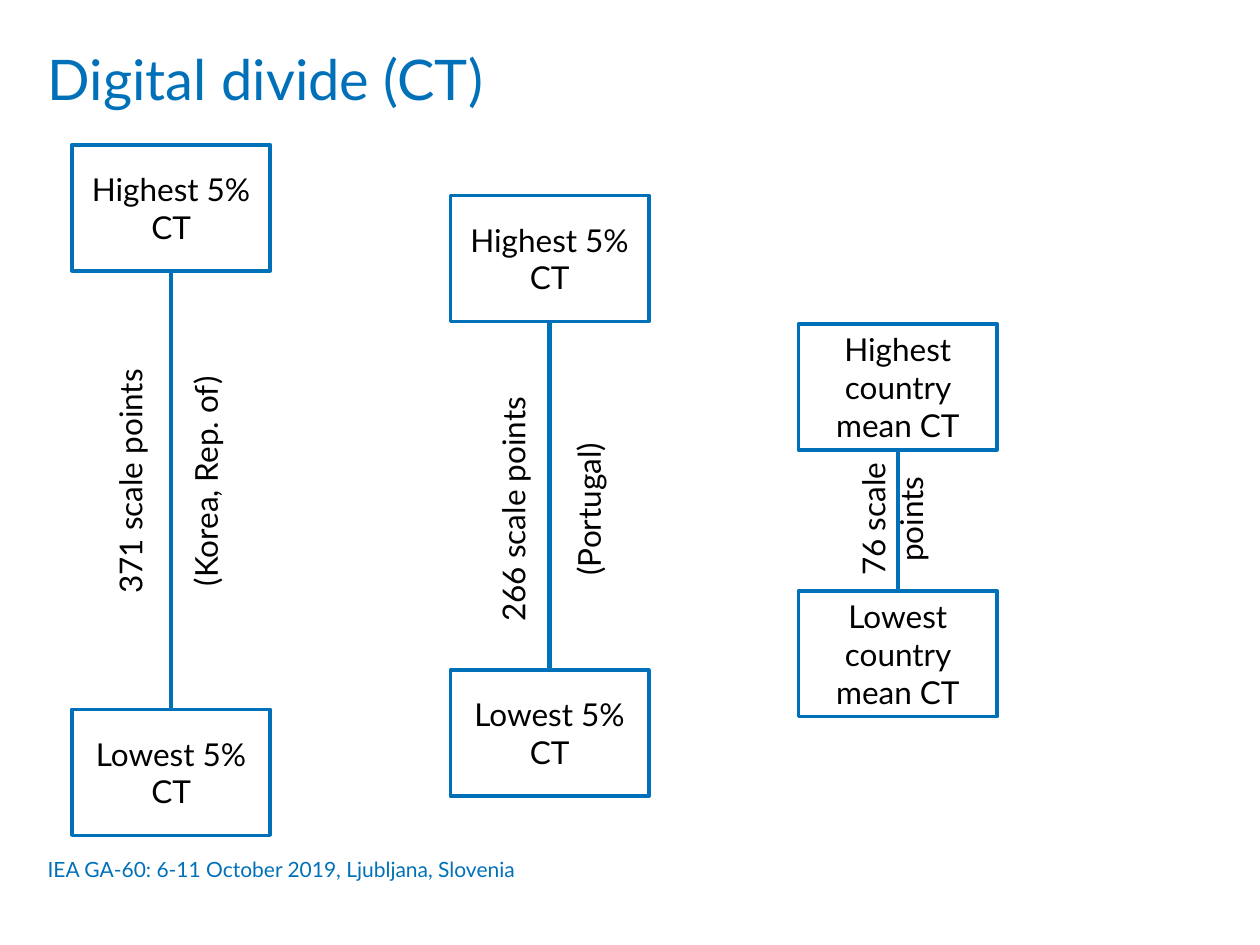
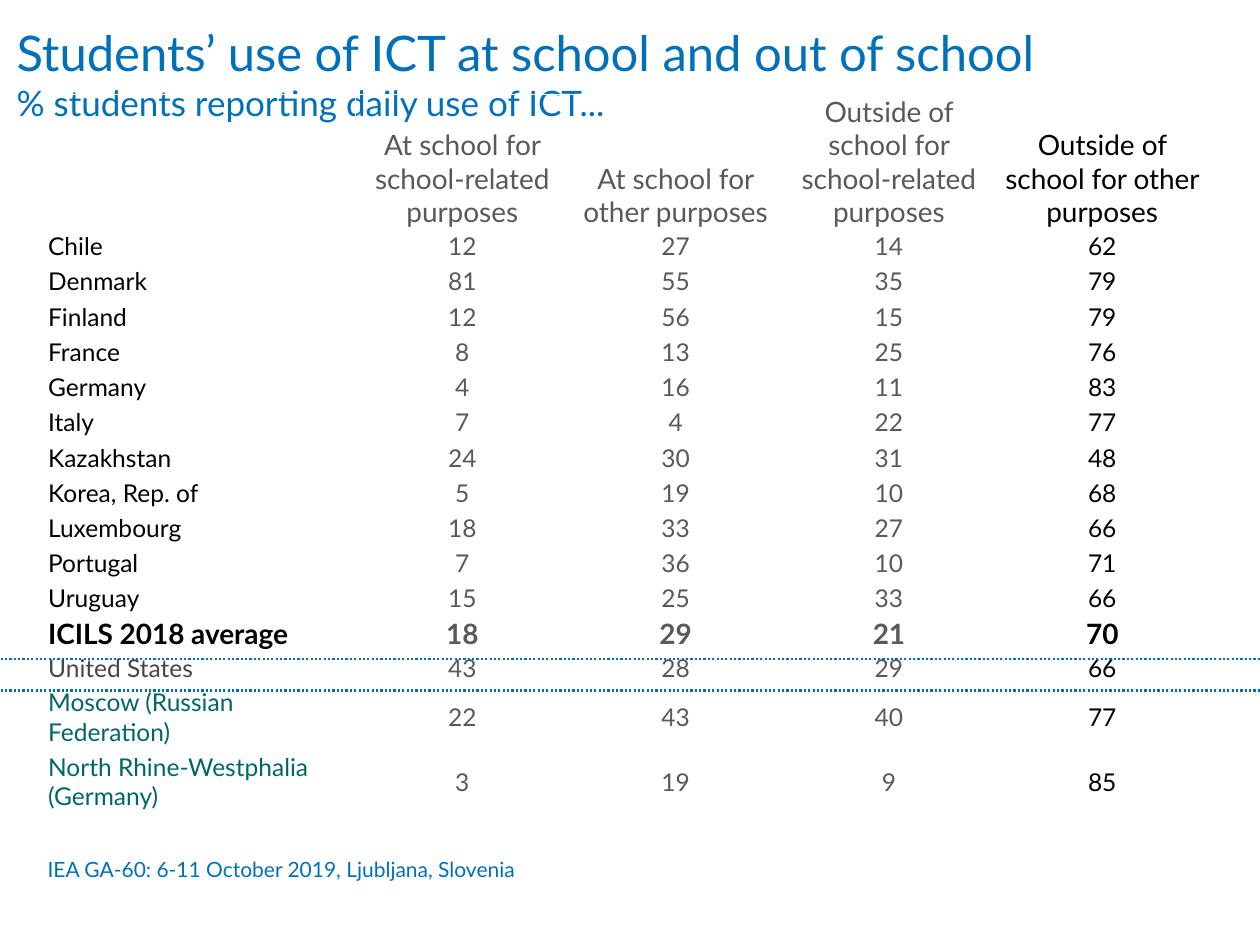
from lxml.etree import SubElement
from pptx import Presentation
from pptx.dml.color import RGBColor
from pptx.enum.dml import MSO_LINE
from pptx.enum.shapes import MSO_CONNECTOR, MSO_SHAPE
from pptx.enum.text import MSO_ANCHOR, MSO_AUTO_SIZE, PP_ALIGN
from pptx.oxml.ns import qn
from pptx.util import Cm, Pt

BLUE = RGBColor(0x00, 0x71, 0xB9)
RULE_BLUE = RGBColor(0x00, 0x6F, 0xB5)
BLACK = RGBColor(0x00, 0x00, 0x00)
WHITE = RGBColor(0xFF, 0xFF, 0xFF)
GREY = RGBColor(0x59, 0x59, 0x59)
DARK_GREY = RGBColor(0x46, 0x46, 0x46)
TEAL = RGBColor(0x00, 0x66, 0x66)

FONT = "Lato"
SLIDE_WIDTH, SLIDE_HEIGHT = 25.4, 19.05
TITLE_ONLY_LAYOUT = 5
FOOTER = "IEA GA-60: 6-11 October 2019, Ljubljana, Slovenia"

BOX_WIDTH, BOX_HEIGHT = 4, 2.54
# left, top, total height, extremes, label box, label lines
SCORE_GAPS = [
    (1.45, 2.92, 13.92, "{} 5% CT", (2.11, 7.09, 2.82, 5.23),
     ["371 scale points", "(Korea, Rep. of)"]),
    (9.08, 3.94, 12.11, "{} 5% CT", (9.83, 7.65, 2.82, 5.23),
     ["266 scale points", "(Portugal)"]),
    (16.1, 6.53, 7.92, "{} country mean CT", (17.09, 9.07, 2.06, 2.79),
     ["76 scale points"]),
]

LABEL_WIDTH, VALUE_WIDTH = 6.2, 4.3
HEADER_HEIGHT, ROW_HEIGHT = 1.5, 0.71
AVERAGE = "ICILS 2018 average"
HEADERS = [
    "",
    "At school for school-related purposes",
    "At school for other purposes",
    "Outside of school for school-related purposes",
    "Outside of school for other purposes",
]
DAILY_USE = [
    ("Chile", 12, 27, 14, 62),
    ("Denmark", 81, 55, 35, 79),
    ("Finland", 12, 56, 15, 79),
    ("France", 8, 13, 25, 76),
    ("Germany", 4, 16, 11, 83),
    ("Italy", 7, 4, 22, 77),
    ("Kazakhstan", 24, 30, 31, 48),
    ("Korea, Rep. of", 5, 19, 10, 68),
    ("Luxembourg", 18, 33, 27, 66),
    ("Portugal", 7, 36, 10, 71),
    ("Uruguay", 15, 25, 33, 66),
    (AVERAGE, 18, 29, 21, 70),
    ("United States", 43, 28, 29, 66),
    ("Moscow (Russian Federation)", 22, 43, 40, 77),
    ("North Rhine-Westphalia (Germany)", 3, 19, 9, 85),
]
LABEL_COLOURS = {
    "United States": DARK_GREY,
    "Moscow (Russian Federation)": TEAL,
    "North Rhine-Westphalia (Germany)": TEAL,
}
SPECIAL_HEIGHTS = {
    "United States": 0.68,
    "Moscow (Russian Federation)": 1.3,
    "North Rhine-Westphalia (Germany)": 1.3,
}


def set_format(target, values):
    for name, value in values.items():
        setattr(target, name, value)


def add_run(paragraph, text, size, colour, bold=False):
    run = paragraph.add_run()
    run.text = text
    set_format(run.font, {"name": FONT, "size": Pt(size), "bold": bold})
    run.font.color.rgb = colour


def add_text_box(slide, box, anchor):
    text_box = slide.shapes.add_textbox(*map(Cm, box))
    set_format(text_box.text_frame, {"word_wrap": True, "vertical_anchor": anchor})
    return text_box


def add_titled_slide(presentation, title_box, lines):
    """Add a slide with footer and a title made of (text, size) lines."""
    slide = presentation.slides.add_slide(
        presentation.slide_layouts[TITLE_ONLY_LAYOUT])
    title = slide.shapes.title
    set_format(title, dict(zip(("left", "top", "width", "height"),
                               map(Cm, title_box))))
    set_format(title.text_frame, {"word_wrap": True,
                                  "auto_size": MSO_AUTO_SIZE.NONE,
                                  "vertical_anchor": MSO_ANCHOR.TOP})
    paragraph = title.text_frame.paragraphs[0]
    paragraph.alignment = PP_ALIGN.LEFT
    for index, (text, size) in enumerate(lines):
        if index:
            paragraph.add_line_break()
        add_run(paragraph, text, size, BLUE)

    footer = add_text_box(slide, (0.71, 16.84, 12.4, 1.07), MSO_ANCHOR.BOTTOM)
    add_run(footer.text_frame.paragraphs[0], FOOTER, 12, BLUE)
    return slide


def add_line(slide, start, end, colour, width):
    line = slide.shapes.add_connector(MSO_CONNECTOR.STRAIGHT,
                                      *map(Cm, start + end))
    line.line.color.rgb = colour
    line.line.width = Pt(width)
    SubElement(line.element.spPr, qn("a:effectLst"))
    return line


def add_extreme_box(slide, left, top, text):
    shape = slide.shapes.add_shape(MSO_SHAPE.RECTANGLE, Cm(left), Cm(top),
                                   Cm(BOX_WIDTH), Cm(BOX_HEIGHT))
    shape.shadow.inherit = False
    shape.fill.solid()
    shape.fill.fore_color.rgb = WHITE
    shape.line.color.rgb = BLUE
    shape.line.width = Pt(2)
    set_format(shape.text_frame, {"word_wrap": True,
                                  "vertical_anchor": MSO_ANCHOR.MIDDLE})
    paragraph = shape.text_frame.paragraphs[0]
    paragraph.alignment = PP_ALIGN.CENTER
    add_run(paragraph, text, 18, BLACK)
    return shape


def add_score_gap(slide, left, top, height, wording, label_box, label_lines):
    """Join a highest and a lowest box by a line with an upright label."""
    bottom = top + height
    highest = add_extreme_box(slide, left, top, wording.format("Highest"))
    lowest = add_extreme_box(slide, left, bottom - BOX_HEIGHT,
                             wording.format("Lowest"))
    middle = left + BOX_WIDTH / 2
    line = add_line(slide, (middle, top + BOX_HEIGHT),
                    (middle, bottom - BOX_HEIGHT), BLUE, 2.5)
    line.begin_connect(highest, 2)
    line.end_connect(lowest, 0)

    label = add_text_box(slide, label_box, MSO_ANCHOR.TOP)
    label.element.txBody.bodyPr.set("vert", "vert270")
    frame = label.text_frame
    for index, text in enumerate(label_lines):
        paragraph = frame.add_paragraph() if index else frame.paragraphs[0]
        paragraph.alignment = PP_ALIGN.CENTER
        if index:
            paragraph.space_before = Pt(21.6)
        add_run(paragraph, text, 18, BLACK)


def fill_cell(cell, text, anchor, alignment, size, colour, bold):
    cell.fill.background()
    set_format(cell, {"margin_left": 0, "margin_right": 0, "margin_top": 0,
                      "margin_bottom": 0, "vertical_anchor": anchor})
    paragraph = cell.text_frame.paragraphs[0]
    paragraph.alignment = alignment
    if text:
        add_run(paragraph, text, size, colour, bold)


def add_daily_use_table(slide, left, top):
    rows = [HEADERS] + DAILY_USE
    widths = [LABEL_WIDTH] + [VALUE_WIDTH] * (len(HEADERS) - 1)
    heights = [HEADER_HEIGHT] + [SPECIAL_HEIGHTS.get(row[0], ROW_HEIGHT)
                                 for row in DAILY_USE]
    table = slide.shapes.add_table(len(rows), len(widths), Cm(left), Cm(top),
                                   Cm(sum(widths)), Cm(sum(heights))).table
    set_format(table, {"first_row": False, "horz_banding": False})
    for column, width in zip(table.columns, widths):
        column.width = Cm(width)
    for row_index, (values, height) in enumerate(zip(rows, heights)):
        table.rows[row_index].height = Cm(height)
        is_header, is_average = row_index == 0, values[0] == AVERAGE
        anchor = MSO_ANCHOR.BOTTOM if is_header else MSO_ANCHOR.MIDDLE
        size = 16 if is_header or is_average else 14
        for column_index, value in enumerate(values):
            alignment, colour = PP_ALIGN.CENTER, GREY
            if column_index == 0:
                alignment = PP_ALIGN.LEFT
                colour = LABEL_COLOURS.get(value, BLACK)
            elif column_index == len(values) - 1:
                colour = BLACK
            fill_cell(table.cell(row_index, column_index), str(value), anchor,
                      alignment, size, colour, is_average)


def build_divide_slide(presentation):
    slide = add_titled_slide(presentation, (0.71, 0.76, 24, 1.75),
                             [("Digital divide (CT)", 32)])
    for score_gap in SCORE_GAPS:
        add_score_gap(slide, *score_gap)


def build_daily_use_slide(presentation):
    slide = add_titled_slide(
        presentation, (0.08, 0.33, 22.6, 1.75),
        [("Students’ use of ICT at school and out of school", 28),
         ("% students reporting daily use of ICT...", 20)])
    add_daily_use_table(slide, 0.97, 1.9)
    for top in (13.28, 13.92):
        rule = add_line(slide, (SLIDE_WIDTH, top), (0, top), RULE_BLUE, 1.25)
        rule.line.dash_style = MSO_LINE.ROUND_DOT


def main():
    presentation = Presentation()
    presentation.slide_width = Cm(SLIDE_WIDTH)
    presentation.slide_height = Cm(SLIDE_HEIGHT)
    build_divide_slide(presentation)
    build_daily_use_slide(presentation)
    presentation.save("out.pptx")


if __name__ == "__main__":
    main()
